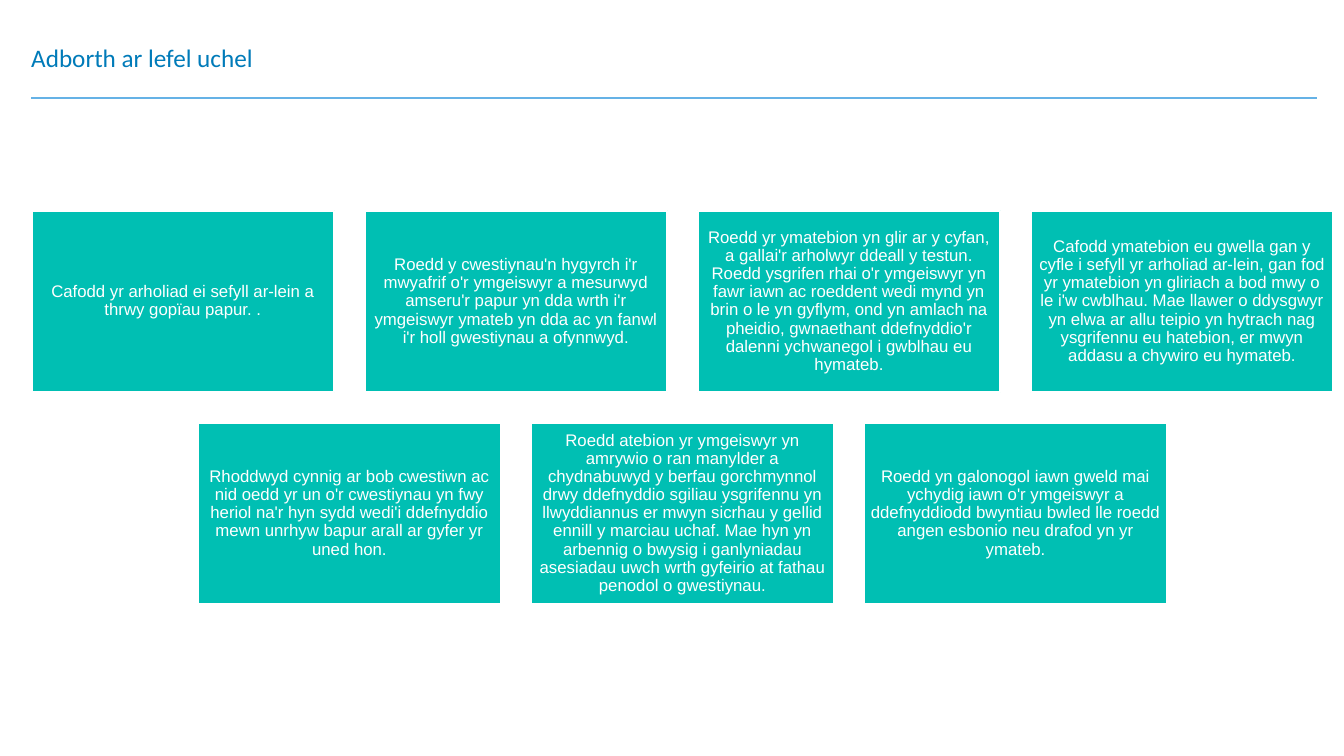
from lxml import etree
from pptx import Presentation
from pptx.dml.color import RGBColor
from pptx.enum.shapes import MSO_CONNECTOR as Connector, MSO_SHAPE as Shape
from pptx.enum.text import MSO_ANCHOR as Anchor, PP_ALIGN as Align
from pptx.oxml.ns import qn
from pptx.util import Pt

COLOURS = {"title": "007BB9", "rule": "65B2E6", "card": "00BFB3", "white": "FFFFFF"}

# Card grid, in points
CARD_WIDTH, CARD_HEIGHT = 216.3, 129.8
GAP = 21.6
GRID_LEFT, GRID_TOP = 22.5, 150.4
COLUMNS = 4

FEEDBACK_ROWS = [
    [
        "Cafodd yr arholiad ei sefyll ar-lein a thrwy gopïau papur. .",
        "Roedd y cwestiynau'n hygyrch i'r mwyafrif o'r ymgeiswyr a mesurwyd amseru'r "
        "papur yn dda wrth i'r ymgeiswyr ymateb yn dda ac yn fanwl i'r holl gwestiynau "
        "a ofynnwyd.",
        "Roedd yr ymatebion yn glir ar y cyfan, a gallai'r arholwyr ddeall y testun. "
        "Roedd ysgrifen rhai o'r ymgeiswyr yn fawr iawn ac roeddent wedi mynd yn brin "
        "o le yn gyflym, ond yn amlach na pheidio, gwnaethant ddefnyddio'r dalenni "
        "ychwanegol i gwblhau eu hymateb.",
        "Cafodd ymatebion eu gwella gan y cyfle i sefyll yr arholiad ar-lein, gan fod "
        "yr ymatebion yn gliriach a bod mwy o le i'w cwblhau. Mae llawer o ddysgwyr yn "
        "elwa ar allu teipio yn hytrach nag ysgrifennu eu hatebion, er mwyn addasu a "
        "chywiro eu hymateb.",
    ],
    [
        "Rhoddwyd cynnig ar bob cwestiwn ac nid oedd yr un o'r cwestiynau yn fwy heriol "
        "na'r hyn sydd wedi'i ddefnyddio mewn unrhyw bapur arall ar gyfer yr uned hon.",
        "Roedd atebion yr ymgeiswyr yn amrywio o ran manylder a chydnabuwyd y berfau "
        "gorchmynnol drwy ddefnyddio sgiliau ysgrifennu yn llwyddiannus er mwyn sicrhau "
        "y gellid ennill y marciau uchaf. Mae hyn yn arbennig o bwysig i ganlyniadau "
        "asesiadau uwch wrth gyfeirio at fathau penodol o gwestiynau.",
        "Roedd yn galonogol iawn gweld mai ychydig iawn o'r ymgeiswyr a ddefnyddiodd "
        "bwyntiau bwled lle roedd angen esbonio neu drafod yn yr ymateb.",
    ],
]


class PageBuilder:
    """Holds the slide style and the current page."""

    def __init__(self, page, colours):
        self.page = page
        self.colours = colours

    def colour(self, name):
        return RGBColor.from_string(self.colours[name])

    def set_text(self, shape, text, font, size, colour, anchor, align, inset):
        frame = shape.text_frame
        frame.text = text
        frame.word_wrap = True
        frame.vertical_anchor = anchor
        frame.margin_left = frame.margin_right = Pt(inset)
        frame.margin_top = frame.margin_bottom = Pt(inset)
        para = frame.paragraphs[0]
        para.alignment = align
        para.line_spacing = 0.9
        span = para.runs[0]
        span.font.name = font
        span.font.size = Pt(size)
        span.font.color.rgb = self.colour(colour)

    def title(self, text, left, top, width, height):
        box = self.page.shapes.add_textbox(Pt(left), Pt(top), Pt(width), Pt(height))
        self.set_text(box, text, "Calibri", 18, "title", Anchor.BOTTOM, Align.LEFT, 0)

    def rule(self, left, right, y):
        line = self.page.shapes.add_connector(
            Connector.STRAIGHT, Pt(left), Pt(y), Pt(right), Pt(y))
        line.line.color.rgb = self.colour("rule")
        line.line.width = Pt(1.75)
        etree.SubElement(line._element.spPr, qn("a:effectLst"))

    def card(self, text, left, top):
        box = self.page.shapes.add_shape(
            Shape.RECTANGLE, Pt(left), Pt(top), Pt(CARD_WIDTH), Pt(CARD_HEIGHT))
        box.shadow.inherit = False
        box.fill.solid()
        box.fill.fore_color.rgb = self.colour("card")
        box.line.color.rgb = self.colour("white")
        box.line.width = Pt(1.5)
        self.set_text(box, text, "Arial", 12, "white", Anchor.MIDDLE, Align.CENTER, 3.6)


def main():
    deck = Presentation()
    deck.slide_width, deck.slide_height = Pt(960), Pt(540)
    builder = PageBuilder(deck.slides.add_slide(deck.slide_layouts[6]), COLOURS)

    # Heading
    builder.rule(22.3, 941, 70)
    builder.title("Adborth ar lefel uchel", 22.3, 16.6, 805, 35.3)

    # Feedback cards, each row centred on the grid
    pitch = CARD_WIDTH + GAP
    for row, texts in enumerate(FEEDBACK_ROWS):
        row_left = GRID_LEFT + (COLUMNS - len(texts)) * pitch / 2
        for column, text in enumerate(texts):
            builder.card(text, row_left + column * pitch,
                         GRID_TOP + row * (CARD_HEIGHT + GAP))

    deck.save("out.pptx")


if __name__ == "__main__":
    main()
